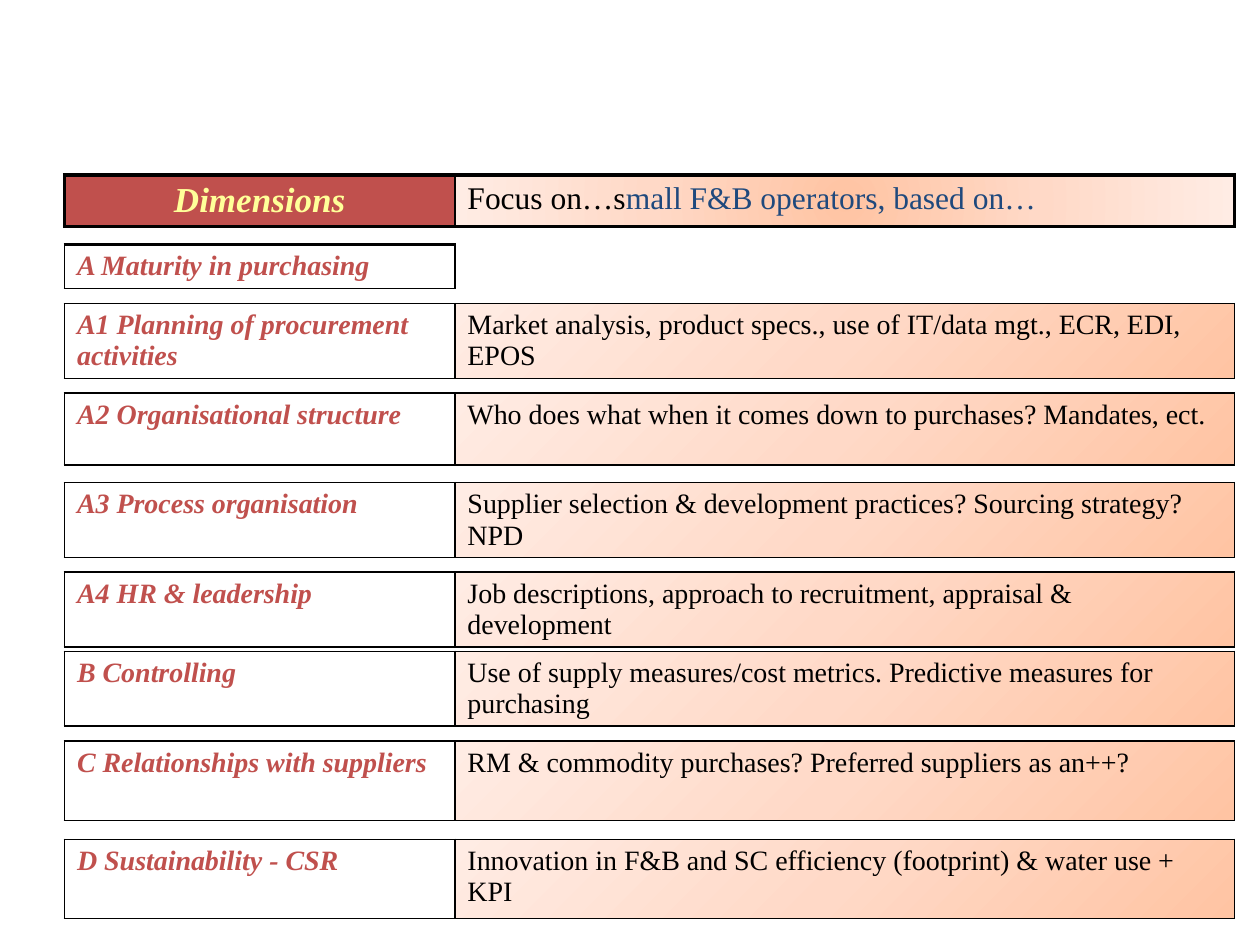
from dataclasses import dataclass

from lxml.etree import SubElement
from pptx import Presentation
from pptx.dml.color import RGBColor
from pptx.enum.text import PP_ALIGN
from pptx.oxml.ns import qn
from pptx.util import Cm, Pt

BLACK = RGBColor(0x00, 0x00, 0x00)
RED = RGBColor(0xC0, 0x50, 0x4D)
YELLOW = RGBColor(0xFF, 0xFF, 0x99)
NAVY = RGBColor(0x1F, 0x49, 0x7D)
PEACH = RGBColor(0xFF, 0xC4, 0xA3)
PEACH_MID = RGBColor(0xFF, 0xD9, 0xC7)
PEACH_PALE = RGBColor(0xFF, 0xEC, 0xE4)

FONT = "Times New Roman"
LEFT = Cm(1.3)
LABEL_W, FOCUS_W = Cm(7.87), Cm(15.72)


@dataclass
class Dimension:
    top: float
    height: float
    label: str
    focus: str = ""
    top_line: float = 1


DIMENSIONS = [
    Dimension(4.93, 0.84, "A Maturity in purchasing", top_line=1.5),
    Dimension(6.12, 1.37, "A1 Planning of procurement activities",
              "Market analysis, product specs., use of IT/data mgt., ECR, EDI, EPOS"),
    Dimension(7.92, 1.45, "A2 Organisational structure",
              "Who does what when it comes down to purchases? Mandates, ect."),
    Dimension(9.73, 1.45, "A3 Process organisation",
              "Supplier selection & development practices? Sourcing strategy? NPD"),
    Dimension(11.53, 1.37, "A4 HR & leadership",
              "Job descriptions, approach to recruitment, appraisal & development"),
    Dimension(13.13, 1.45, "B Controlling",
              "Use of supply measures/cost metrics. Predictive measures for purchasing"),
    Dimension(14.94, 1.6, "C Relationships with suppliers",
              "RM & commodity purchases? Preferred suppliers as an++?"),
    Dimension(16.92, 1.6, "D Sustainability - CSR",
              "Innovation in F&B and SC efficiency (footprint) & water use + KPI"),
]


def add_text(cell, text: str, *, size: float = 16, color: RGBColor = BLACK,
             emphasis: bool = False, align: PP_ALIGN = PP_ALIGN.LEFT) -> None:
    p = cell.text_frame.paragraphs[0]
    p.alignment = align
    r = p.add_run()
    r.text = text
    r.font.name, r.font.size = FONT, Pt(size)
    r.font.bold = r.font.italic = emphasis
    r.font.color.rgb = color


def set_borders(cell, left: float = 1, right: float = 1,
                top: float = 1, bottom: float = 1) -> None:
    """Draw black borders; call before filling, as lines precede the fill."""
    tc_pr = cell._tc.get_or_add_tcPr()
    for side, width in zip("LRTB", (left, right, top, bottom)):
        ln = SubElement(tc_pr, qn(f"a:ln{side}"), w=str(Pt(width)))
        fill = SubElement(ln, qn("a:solidFill"))
        SubElement(fill, qn("a:srgbClr"), val=str(BLACK))


def set_gradient(cell, radial: bool = False) -> None:
    grad = SubElement(cell._tc.get_or_add_tcPr(), qn("a:gradFill"), rotWithShape="1")
    stops = SubElement(grad, qn("a:gsLst"))
    for pos, color in ((0, PEACH), (50, PEACH_MID), (100, PEACH_PALE)):
        gs = SubElement(stops, qn("a:gs"), pos=str(pos * 1000))
        SubElement(gs, qn("a:srgbClr"), val=str(color))
    if radial:
        circle = SubElement(grad, qn("a:path"), path="circle")
        SubElement(circle, qn("a:fillToRect"), l="50000", t="50000", r="50000", b="50000")
    else:
        SubElement(grad, qn("a:lin"), ang=str(225 * 60000), scaled="0")


def add_row(slide, top: float, height: float, widths: list) -> list:
    """Add a one-row table and return its cells."""
    table = slide.shapes.add_table(1, len(widths), LEFT, Cm(top),
                                   sum(widths), Cm(height)).table
    table.first_row = table.horz_banding = False
    table.rows[0].height = Cm(height)
    for column, width in zip(table.columns, widths):
        column.width = width
    return list(table.rows[0].cells)


def add_header(slide) -> None:
    label, focus = add_row(slide, 3.53, 0.94, [LABEL_W, FOCUS_W])
    set_borders(label, left=2.25, top=2.25, bottom=2.25)
    label.fill.solid()
    label.fill.fore_color.rgb = RED
    add_text(label, "Dimensions", size=20, color=YELLOW, emphasis=True,
             align=PP_ALIGN.CENTER)
    set_borders(focus, right=2.25, top=2.25, bottom=2.25)
    set_gradient(focus, radial=True)
    add_text(focus, "Focus on…s", size=18)
    add_text(focus, "mall F&B operators, based on…", size=18, color=NAVY)


def add_dimension(slide, d: Dimension) -> None:
    widths = [LABEL_W, FOCUS_W] if d.focus else [LABEL_W]
    label, *others = add_row(slide, d.top, d.height, widths)
    set_borders(label, top=d.top_line)
    label.fill.background()
    add_text(label, d.label, color=RED, emphasis=True)
    for focus in others:
        set_borders(focus)
        set_gradient(focus)
        add_text(focus, d.focus)


def main() -> None:
    prs = Presentation()
    prs.slide_width, prs.slide_height = Cm(25.4), Cm(19.05)
    s = prs.slides.add_slide(prs.slide_layouts[6])

    # Heading row, then one table per dimension
    add_header(s)
    for d in DIMENSIONS:
        add_dimension(s, d)

    prs.save("out.pptx")


if __name__ == "__main__":
    main()
